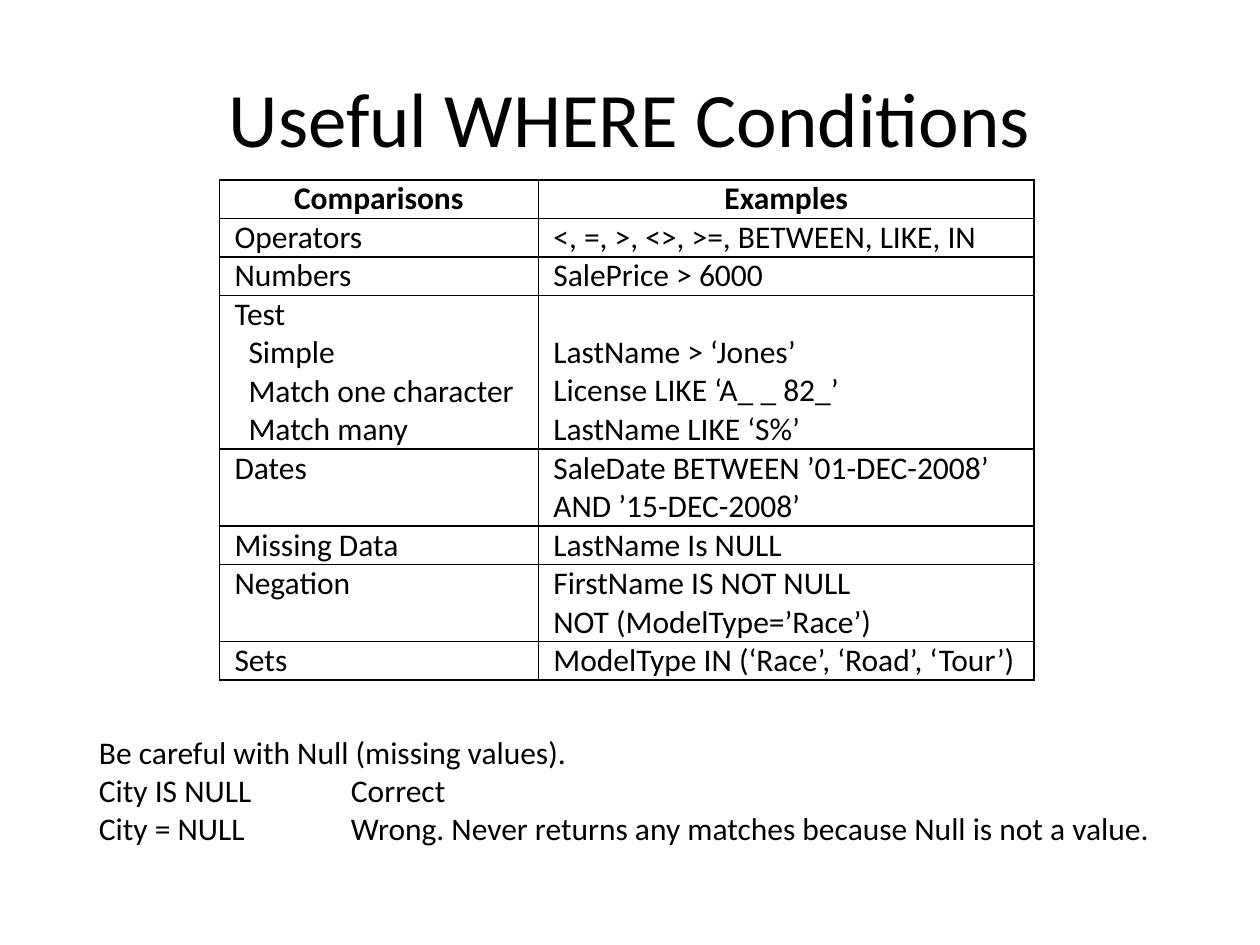
from dataclasses import dataclass

from lxml import etree
from pptx import Presentation
from pptx.dml.color import RGBColor
from pptx.enum.text import MSO_ANCHOR, MSO_AUTO_SIZE, PP_ALIGN
from pptx.oxml import parse_xml
from pptx.oxml.ns import nsdecls, qn
from pptx.util import Pt

LEFT, CENTER = PP_ALIGN.LEFT, PP_ALIGN.CENTER
MIDDLE = MSO_ANCHOR.MIDDLE
GROW = MSO_AUTO_SIZE.SHAPE_TO_FIT_TEXT
TITLE_ONLY = 5


@dataclass(frozen=True)
class Theme:
    font: str = "Calibri"
    ink: str = "000000"
    title: float = 44
    body: float = 18
    rule: float = 1


THEME = Theme()
LINE = 21.6
INDENT = 8
ROWS = [
    ("Comparisons", "Examples"),
    ("Operators", "<, =, >, <>, >=, BETWEEN, LIKE, IN"),
    ("Numbers", "SalePrice > 6000"),
    (
        "Test\n\tSimple\n\tMatch one character\n\tMatch many",
        "LastName > ‘Jones’\nLicense LIKE ‘A_ _ 82_’\nLastName LIKE ‘S%’",
    ),
    ("Dates", "SaleDate BETWEEN ’01-DEC-2008’ AND ’15-DEC-2008’"),
    ("Missing Data", "LastName Is NULL"),
    ("Negation", "FirstName IS NOT NULL\nNOT (ModelType=’Race’)"),
    ("Sets", "ModelType IN (‘Race’, ‘Road’, ‘Tour’)"),
]
LINES = [1, 1, 1, 4, 2, 1, 2, 1]
NOTE = (
    "Be careful with Null (missing values).\n"
    "City IS NULL\tCorrect\n"
    "City = NULL\tWrong. Never returns any matches because Null is not a value."
)


def write(frame, text, size=THEME.body, bold=False, align=LEFT, tab=None):
    for i, line in enumerate(text.split("\n")):
        para = frame.paragraphs[0] if i == 0 else frame.add_paragraph()
        para.alignment = align
        props = para._p.get_or_add_pPr()
        if line.startswith("\t"):
            props.set("marL", str(Pt(INDENT)))
            props.set("indent", "0")
        if tab:
            stops = etree.SubElement(props, qn("a:tabLst"))
            etree.SubElement(stops, qn("a:tab"), pos=str(Pt(tab)), algn="l")
        run = para.add_run()
        run.text = line.lstrip("\t")
        font = run.font
        font.name, font.size, font.bold = THEME.font, Pt(size), bold
        font.color.rgb = RGBColor.from_string(THEME.ink)


def frame_cell(cell):
    props = cell._tc.get_or_add_tcPr()
    for side in ("lnL", "lnR", "lnT", "lnB"):
        props.append(parse_xml(
            f'<a:{side} {nsdecls("a")} w="{Pt(THEME.rule)}"><a:solidFill>'
            f'<a:srgbClr val="{THEME.ink}"/></a:solidFill></a:{side}>'
        ))
    cell.fill.background()


def add_title(slide, x, y, w, h):
    title = slide.shapes.title
    title.left, title.top, title.width, title.height = map(Pt, (x, y, w, h))
    title.text_frame.vertical_anchor = MIDDLE
    write(title.text_frame, "Useful WHERE Conditions", size=THEME.title, align=CENTER)


def add_grid(slide, x, y, w, h):
    shape = slide.shapes.add_table(len(ROWS), 2, *map(Pt, (x, y, w, h)))
    table = shape.table
    split = 182.2
    for col, width in zip(table.columns, (split, w - split)):
        col.width = Pt(width)
    for r, (texts, lines) in enumerate(zip(ROWS, LINES)):
        table.rows[r].height = Pt(h * lines / sum(LINES))
        head = r == 0
        for c, text in enumerate(texts):
            cell = table.cell(r, c)
            cell.margin_left = cell.margin_right = Pt(8.64)
            skip = c == 1 and "\t" in texts[0]
            cell.margin_top = Pt(LINE if skip else 0)
            cell.margin_bottom = Pt(0)
            write(cell.text_frame, text, bold=head, align=CENTER if head else LEFT)
            frame_cell(cell)


def add_note(slide, x, y, w, h):
    frame = slide.shapes.add_textbox(*map(Pt, (x, y, w, h))).text_frame
    frame.word_wrap = False
    frame.auto_size = GROW
    write(frame, NOTE, tab=144)


def main():
    deck = Presentation()
    deck.slide_width, deck.slide_height = Pt(720), Pt(540)
    slide = deck.slides.add_slide(deck.slide_layouts[TITLE_ONLY])
    add_title(slide, 36, 21.6, 648, 90)
    add_grid(slide, 125.4, 102.8, 465.6, LINE * sum(LINES))
    add_note(slide, 49.5, 415.4, 617, 72.7)
    deck.save("out.pptx")


if __name__ == "__main__":
    main()
